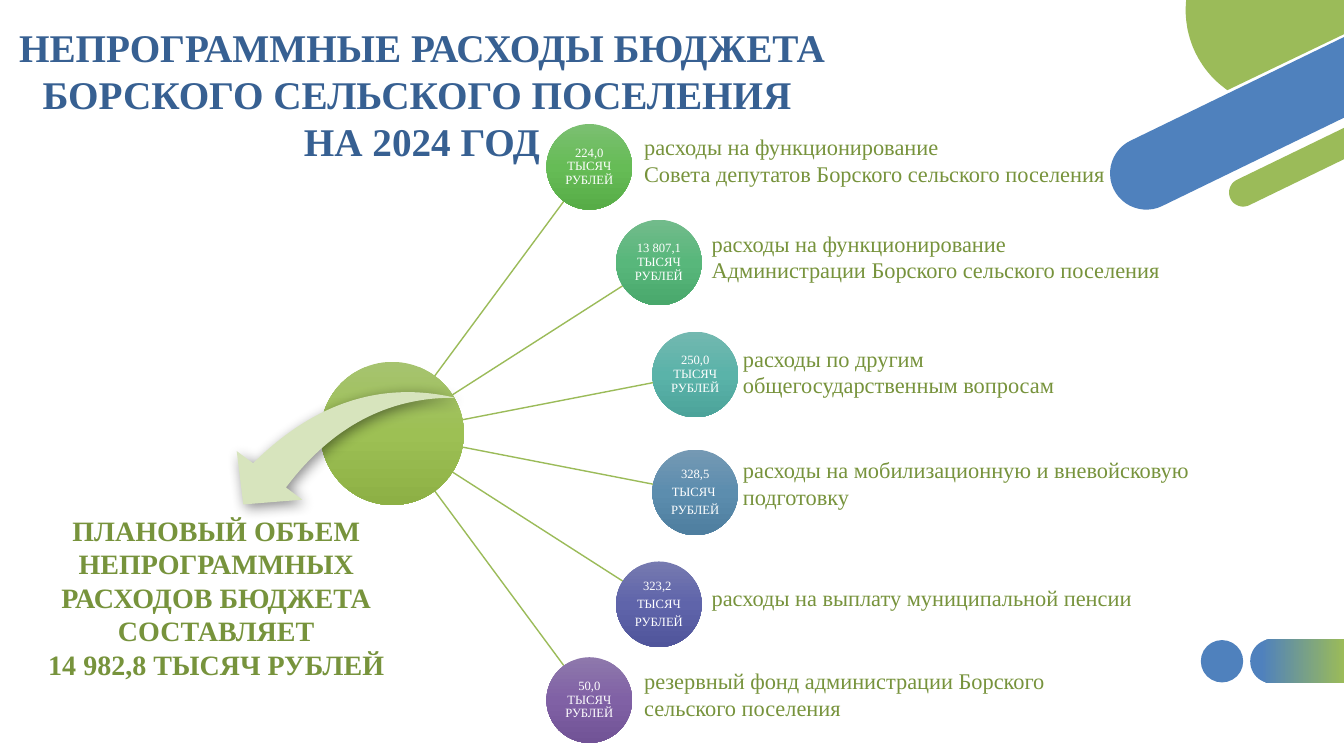
"""Build the slide on non-programme budget spending of the Borskoye settlement."""
from copy import deepcopy
from dataclasses import dataclass
from math import cos, hypot, radians, sin, tan

from lxml.etree import SubElement
from pptx import Presentation
from pptx.dml.color import RGBColor
from pptx.enum.shapes import MSO_CONNECTOR as Link, MSO_SHAPE as Preset
from pptx.enum.text import MSO_ANCHOR as Anchor, MSO_AUTO_SIZE as AutoSize, PP_ALIGN as Align
from pptx.oxml.ns import qn
from pptx.util import Inches, Pt

FONT = "Times New Roman"
BLUE, GREEN, WHITE = "4F81BD", "9BBB59", "FFFFFF"
NAVY, OLIVE, PALE = "376092", "77933C", "D7E4BD"
SLIDE_WIDTH, SLIDE_HEIGHT = 13.33, 7.5
HUB_X, HUB_Y, HUB_SIZE, BUBBLE_SIZE = 3.89, 4.3, 1.42, 0.85
SPOKE_START = 0.6
UNITS, ARC_STEPS = 1000, 24

Point = tuple[float, float]
Stops = list[tuple[float, str]]


@dataclass
class Band:
    """Stripe with a round left end that rises to the right slide edge."""
    x: float
    y: float
    radius: float
    slope: float
    fill: str | Stops


@dataclass
class Expense:
    """One spending item: its bubble and description."""
    amount: str
    purpose: str
    x: float
    y: float
    text_x: float
    text_y: float
    shades: str
    text_height: float = 0.64


BANDS = [
    Band(12.62, 6.56, 0.22, 0, [(0.12, BLUE), (1, GREEN)]),
    Band(11.37, 1.72, 0.36, 25.9, BLUE),
    Band(12.33, 1.91, 0.14, 25.9, GREEN),
]

EXPENSES = [
    Expense("224,0 ТЫСЯЧ РУБЛЕЙ",
            "расходы на функционирование\nСовета депутатов Борского сельского поселения",
            5.42, 1.23, 6.29, 1.27, "7BBF71 66BC56 57AC47"),
    Expense("13 807,1 ТЫСЯЧ РУБЛЕЙ",
            "расходы на функционирование\nАдминистрации Борского сельского поселения",
            6.11, 2.18, 6.96, 2.23, "72BB8B 58B77B 49A86C"),
    Expense("250,0 ТЫСЯЧ РУБЛЕЙ", "расходы по другим\nобщегосударственным вопросам",
            6.47, 3.29, 7.27, 3.37, "73B8B0 5AB3A9 4CA39A"),
    Expense("328,5\nТЫСЯЧ \nРУБЛЕЙ", "расходы на мобилизационную и вневойсковую подготовку",
            6.47, 4.46, 7.27, 4.48, "7599B4 5C8DAE 4E7E9F"),
    Expense("323,2 \nТЫСЯЧ\nРУБЛЕЙ", "расходы на выплату муниципальной пенсии",
            6.11, 5.57, 6.96, 5.75, "767AB0 5F64AA 50559B", 0.37),
    Expense("50,0 ТЫСЯЧ РУБЛЕЙ", "резервный фонд администрации Борского сельского поселения",
            5.42, 6.52, 6.29, 6.57, "8E78AC 8061A5 715396"),
]


def rgb(color: str) -> RGBColor:
    return RGBColor.from_string(color)


def shade_stops(shades: str) -> Stops:
    return list(zip((0, 0.5, 1), shades.split()))


def paint(shape, fill: str | Stops, angle: float = 0) -> None:
    shape.shadow.inherit = False
    shape.line.fill.background()
    if isinstance(fill, str):
        shape.fill.solid()
        shape.fill.fore_color.rgb = rgb(fill)
        return
    shape.fill.gradient()
    shape.fill.gradient_angle = angle
    stop_list = shape.element.spPr.find(".//" + qn("a:gsLst"))
    while len(stop_list) < len(fill):
        stop_list.append(deepcopy(stop_list[0]))
    for stop, (position, color) in zip(shape.fill.gradient_stops, fill):
        stop.position = position
        stop.color.rgb = rgb(color)


def write(frame, text: str, size: float, color: str, bold: bool = False,
          align: Align = Align.LEFT) -> None:
    frame.word_wrap = True
    frame.text = text
    for paragraph in frame.paragraphs:
        paragraph.alignment = align
        for run in paragraph.runs:
            run.font.name, run.font.size, run.font.bold = FONT, Pt(size), bold
            run.font.color.rgb = rgb(color)


def add_label(slide, box: tuple[float, ...], text: str, size: float, color: str,
              bold: bool = False, align: Align = Align.LEFT) -> None:
    frame = slide.shapes.add_textbox(*map(Inches, box)).text_frame
    write(frame, text, size, color, bold, align)
    frame.auto_size = AutoSize.SHAPE_TO_FIT_TEXT


def arc(x: float, y: float, radius: float, start: float, end: float) -> list[Point]:
    angles = [radians(start + (end - start) * i / ARC_STEPS) for i in range(ARC_STEPS + 1)]
    return [(x + radius * cos(angle), y + radius * sin(angle)) for angle in angles]


def add_outline(slide, points: list[Point], fill: str | Stops) -> None:
    first, *rest = [(x * UNITS, y * UNITS) for x, y in points]
    builder = slide.shapes.build_freeform(*first, scale=Inches(1) / UNITS)
    builder.add_line_segments(rest, close=True)
    paint(builder.convert_to_shape(), fill)


def add_band(slide, band: Band) -> None:
    cap = arc(band.x, band.y, band.radius, -90 - band.slope, -270 - band.slope)
    edge = [(SLIDE_WIDTH, y - (SLIDE_WIDTH - x) * tan(radians(band.slope)))
            for x, y in (cap[-1], cap[0])]
    add_outline(slide, cap + edge, band.fill)


def add_corner_leaf(slide) -> None:
    rim = arc(12.73, 0.1, 0.97, 125, 186)
    add_outline(slide, rim + [(SLIDE_WIDTH, 0), (SLIDE_WIDTH, 0.34)], GREEN)


def add_circle(slide, x: float, y: float, size: float, fill: str | Stops):
    circle = slide.shapes.add_shape(Preset.OVAL, *map(Inches, (x, y, size, size)))
    paint(circle, fill, 270)
    return circle


def add_spoke(slide, expense: Expense) -> None:
    radius = BUBBLE_SIZE / 2
    dx, dy = expense.x + radius - HUB_X, expense.y + radius - HUB_Y
    length = hypot(dx, dy)
    ends = [start + step * distance / length
            for distance in (SPOKE_START, length - radius)
            for start, step in ((HUB_X, dx), (HUB_Y, dy))]
    spoke = slide.shapes.add_connector(Link.STRAIGHT, *map(Inches, ends))
    spoke.line.color.rgb, spoke.line.width = rgb(GREEN), Pt(1)
    SubElement(spoke.element.spPr, qn("a:effectLst"))


def add_bubble(slide, expense: Expense) -> None:
    bubble = add_circle(slide, expense.x, expense.y, BUBBLE_SIZE, shade_stops(expense.shades))
    frame = bubble.text_frame
    frame.margin_left = frame.margin_right = frame.margin_top = frame.margin_bottom = Inches(0.01)
    frame.vertical_anchor = Anchor.MIDDLE
    write(frame, expense.amount, 9, WHITE, align=Align.CENTER)
    for paragraph in frame.paragraphs:
        paragraph.line_spacing, paragraph.space_after = 0.9, Pt(3)


def add_total_arrow(slide) -> None:
    arrow = slide.shapes.add_shape(Preset.SWOOSH_ARROW, *map(Inches, (2.34, 3.59, 1.97, 1.61)))
    paint(arrow, PALE)
    arrow.adjustments[0] = arrow.adjustments[1] = 0.25
    arrow.rotation = 120.1
    properties = arrow.element.spPr
    properties.find(qn("a:xfrm")).set("flipV", "1")
    shadow = SubElement(properties.find(qn("a:effectLst")), qn("a:outerShdw"),
                        blurRad=str(Pt(10)), dist=str(Pt(3)), dir="2700000", rotWithShape="0")
    shade = SubElement(shadow, qn("a:srgbClr"), val="000000")
    SubElement(shade, qn("a:alpha"), val="45000")


def main() -> None:
    deck = Presentation()
    deck.slide_width, deck.slide_height = Inches(SLIDE_WIDTH), Inches(SLIDE_HEIGHT)
    slide = deck.slides.add_slide(deck.slide_layouts[6])
    add_circle(slide, 11.91, 6.35, 0.42, BLUE)
    for band in BANDS:
        add_band(slide, band)
    add_corner_leaf(slide)
    add_label(slide, (-1.03, 0.18, 10.43, 1.51),
              "НЕПРОГРАММНЫЕ РАСХОДЫ БЮДЖЕТА\nБОРСКОГО СЕЛЬСКОГО ПОСЕЛЕНИЯ \nНА 2024 ГОД",
              28, NAVY, True, Align.CENTER)
    add_label(slide, (0.28, 5.04, 3.73, 1.78),
              "ПЛАНОВЫЙ ОБЪЕМ НЕПРОГРАММНЫХ РАСХОДОВ БЮДЖЕТА СОСТАВЛЯЕТ\n14 982,8 ТЫСЯЧ РУБЛЕЙ",
              20, OLIVE, True, Align.CENTER)
    for expense in EXPENSES:
        add_spoke(slide, expense)
    add_circle(slide, HUB_X - HUB_SIZE / 2, HUB_Y - HUB_SIZE / 2, HUB_SIZE,
               shade_stops("A6C36F 9DC054 8DB045"))
    for expense in EXPENSES:
        add_bubble(slide, expense)
        add_label(slide, (expense.text_x, expense.text_y, 4.88, expense.text_height),
                  expense.purpose, 16, OLIVE)
    add_total_arrow(slide)
    deck.save("out.pptx")


if __name__ == "__main__":
    main()
